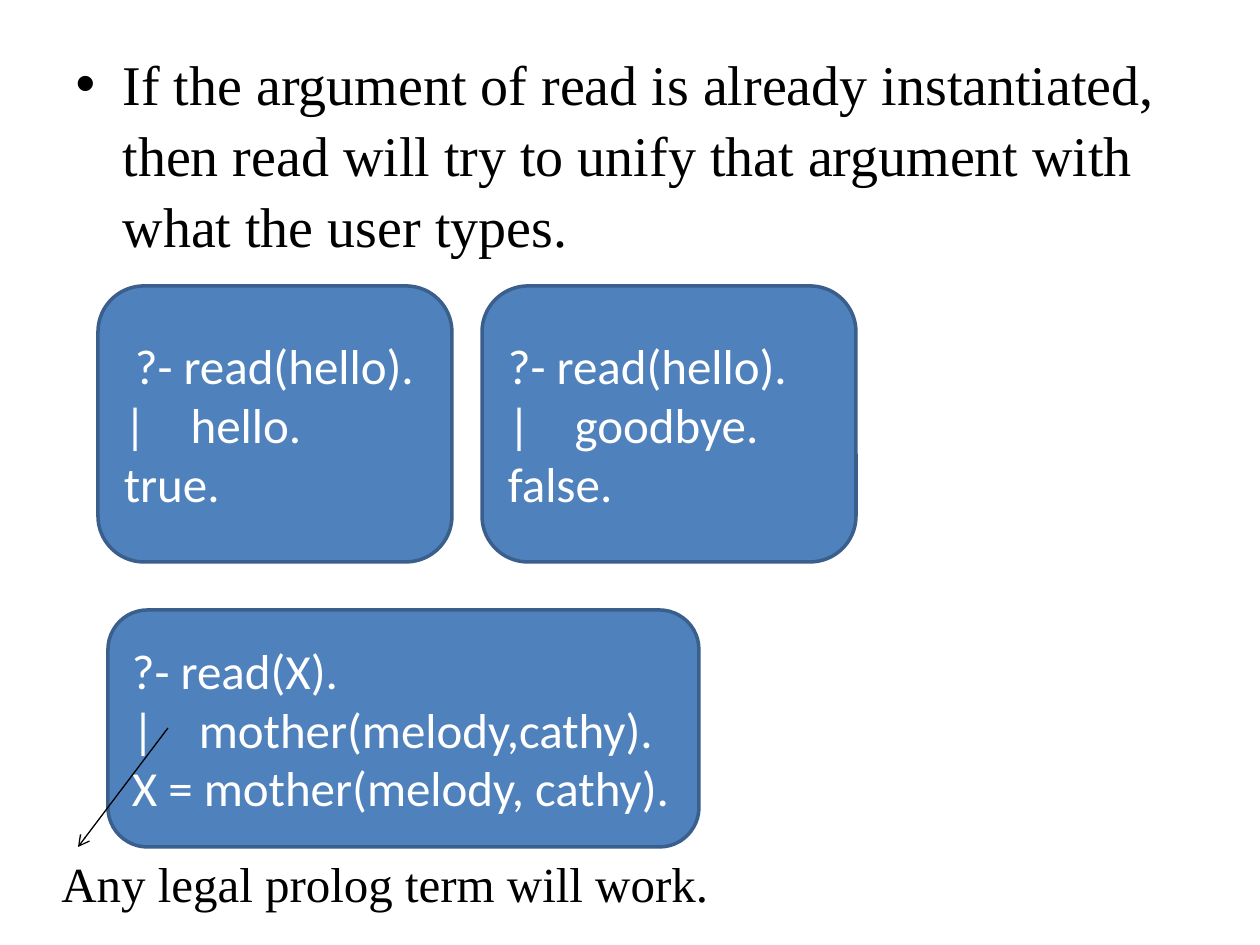
from lxml import etree
from pptx import Presentation
from pptx.dml.color import RGBColor
from pptx.enum.shapes import MSO_CONNECTOR, MSO_SHAPE
from pptx.enum.text import MSO_ANCHOR, PP_ALIGN
from pptx.oxml.ns import qn
from pptx.util import Emu, Pt

ROUNDED = MSO_SHAPE.ROUNDED_RECTANGLE
STRAIGHT = MSO_CONNECTOR.STRAIGHT
MIDDLE = MSO_ANCHOR.MIDDLE
LEFT, JUSTIFY = PP_ALIGN.LEFT, PP_ALIGN.JUSTIFY
SERIF, SANS = "Times New Roman", "Calibri"


def px(*lengths):
    return [Emu(length * 914400 // 126) for length in lengths]


def write(frame, text, font=SERIF, size=28, color="000000", align=LEFT, spacing=None, bullet=None):
    frame.word_wrap = True
    for i, line in enumerate(text.split("\n")):
        paragraph = frame.paragraphs[0] if i == 0 else frame.add_paragraph()
        paragraph.alignment = align
        paragraph.space_before = Pt(0)
        if spacing:
            paragraph.line_spacing = spacing
        if bullet:
            properties = paragraph._p.get_or_add_pPr()
            hang = px(47)[0]
            properties.set("marL", str(hang))
            properties.set("indent", str(-hang))
            etree.SubElement(properties, qn("a:buFont")).set("typeface", "Arial")
            etree.SubElement(properties, qn("a:buChar")).set("char", bullet)
        run = paragraph.add_run()
        run.text = line
        run.font.name = font
        run.font.size = Pt(size)
        run.font.color.rgb = RGBColor.from_string(color)


prs = Presentation()
prs.slide_width, prs.slide_height = px(1260, 945)
slide = prs.slides.add_slide(prs.slide_layouts[1])
title, rule = slide.placeholders
title.element.getparent().remove(title.element)

rule.left, rule.top, rule.width, rule.height = px(63, 39, 1134, 805)
write(
    rule.text_frame,
    "If the argument of read is already instantiated, then read will try to unify "
    "that argument with what the user types.",
    size=32, spacing=1.06, bullet="•",
)

queries = [
    ((98, 286, 354, 276), LEFT, " ?- read(hello).\n|    hello.\ntrue."),
    ((482, 286, 374, 276), JUSTIFY, "?- read(hello).\n|    goodbye.\nfalse."),
    ((108, 610, 591, 237), JUSTIFY,
     "?- read(X).\n|    mother(melody,cathy).\nX = mother(melody, cathy)."),
]
for box, align, session in queries:
    query = slide.shapes.add_shape(ROUNDED, *px(*box))
    query.shadow.inherit = False
    query.fill.solid()
    query.fill.fore_color.rgb = RGBColor.from_string("4F81BD")
    query.line.color.rgb = RGBColor.from_string("3A5F8C")
    query.line.width = Pt(2)
    query.text_frame.vertical_anchor = MIDDLE
    write(query.text_frame, session, font=SANS, color="FFFFFF", align=align)

pointer = slide.shapes.add_connector(STRAIGHT, *px(168, 728, 78, 847))
pointer.line.color.rgb = RGBColor.from_string("000000")
pointer.line.width = Pt(0.75)
etree.SubElement(pointer.line._get_or_add_ln(), qn("a:tailEnd")).set("type", "arrow")
etree.SubElement(pointer._element.spPr, qn("a:effectLst"))

remark = slide.shapes.add_textbox(*px(49, 847, 759, 72))
write(remark.text_frame, "Any legal prolog term will work.")

prs.save("out.pptx")
